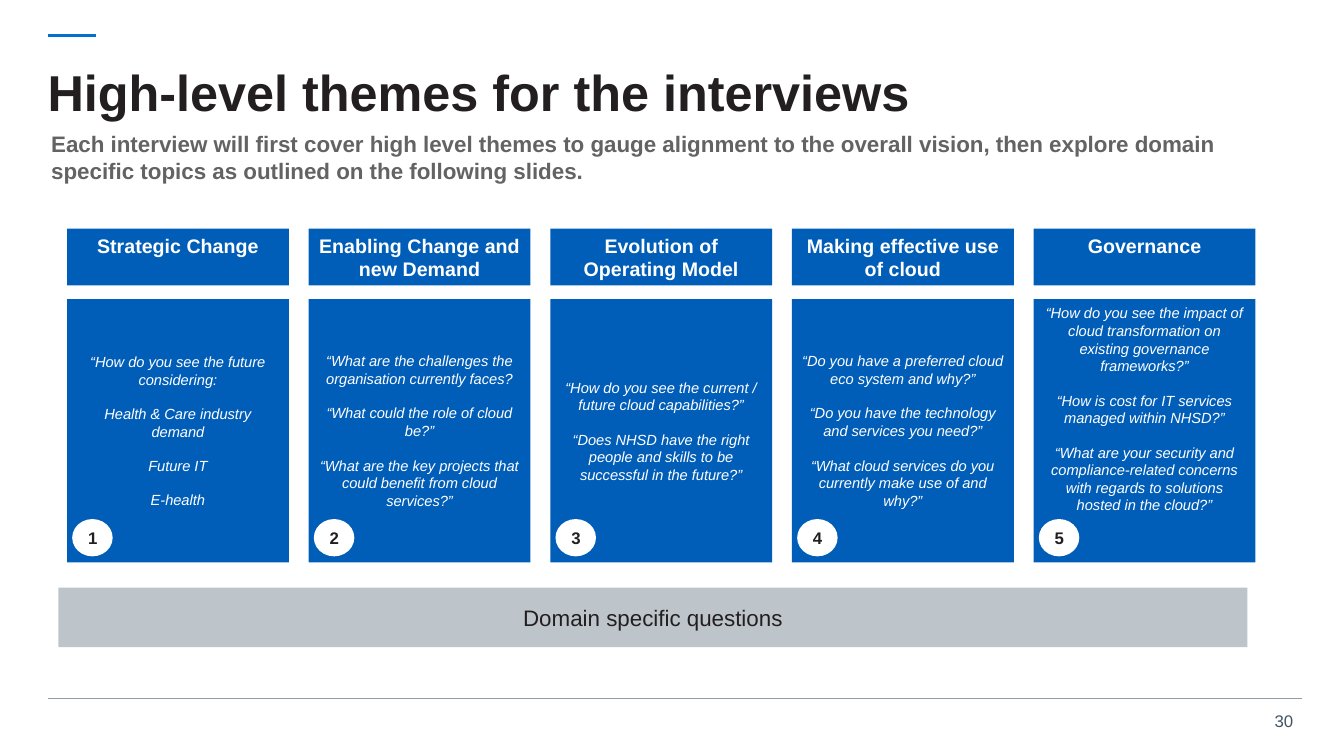
from pptx import Presentation
from pptx.dml.color import RGBColor
from pptx.enum.shapes import MSO_CONNECTOR, MSO_SHAPE
from pptx.enum.text import MSO_ANCHOR, PP_ALIGN
from pptx.oxml.ns import qn
from pptx.util import Cm, Pt

BLUE = RGBColor(0x00, 0x5E, 0xB8)
ACCENT = RGBColor(0x00, 0x72, 0xCE)
RULE = RGBColor(0x91, 0x9E, 0xA8)
BAR = RGBColor(0xBD, 0xC5, 0xCB)
INK = RGBColor(0x23, 0x1F, 0x20)
GREY = RGBColor(0x63, 0x63, 0x63)
SLATE = RGBColor(0x42, 0x55, 0x63)
WHITE = RGBColor(0xFF, 0xFF, 0xFF)

COLUMN_LEFT, COLUMN_STEP, COLUMN_WIDTH = 1.69, 6.09, 5.59

THEMES = [
    ("Strategic Change", MSO_ANCHOR.MIDDLE, [
        "“How do you see the future considering:",
        "Health & Care industry demand",
        "Future IT",
        "E-health"]),
    ("Enabling Change and new Demand", MSO_ANCHOR.MIDDLE, [
        "“What are the challenges the organisation currently faces?",
        "“What could the role of cloud be?”",
        "“What are the key projects that could benefit from cloud services?”"]),
    ("Evolution of Operating Model", MSO_ANCHOR.MIDDLE, [
        "“How do you see the current / future cloud capabilities?”",
        "“Does NHSD have the right people and skills to be successful in the future?”"]),
    ("Making effective use of cloud", MSO_ANCHOR.MIDDLE, [
        "“Do you have a preferred cloud eco system and why?”",
        "“Do you have the technology and services you need?”",
        "“What cloud services do you currently make use of and why?”"]),
    ("Governance", MSO_ANCHOR.TOP, [
        "“How do you see the impact of cloud transformation on existing governance frameworks?”",
        "“How is cost for IT services managed within NHSD?”",
        "“What are your security and compliance-related concerns with regards to solutions "
        "hosted in the cloud?”"]),
]


def write(tf, texts, size, color, bold=False, italic=False,
          align=PP_ALIGN.LEFT, anchor=MSO_ANCHOR.TOP, gap=0):
    """Fill a text frame, one paragraph per text, with gap points between them."""
    tf.word_wrap = True
    tf.vertical_anchor = anchor
    for i, text in enumerate(texts):
        p = tf.paragraphs[0] if i == 0 else tf.add_paragraph()
        p.alignment = align
        if i:
            p.space_before = Pt(gap)
        r = p.add_run()
        r.text = text
        r.font.name = "Arial"
        r.font.size = Pt(size)
        r.font.bold = bold
        r.font.italic = italic
        r.font.color.rgb = color


def add_text(s, box, text, size, color, **style):
    tf = s.shapes.add_textbox(*map(Cm, box)).text_frame
    write(tf, [text], size, color, **style)
    return tf


def add_block(s, kind, box, fill, texts, size, color, anchor=MSO_ANCHOR.MIDDLE, **style):
    sp = s.shapes.add_shape(kind, *map(Cm, box))
    sp.shadow.inherit = False
    sp.fill.solid()
    sp.fill.fore_color.rgb = fill
    sp.line.fill.background()
    write(sp.text_frame, texts, size, color, align=PP_ALIGN.CENTER, anchor=anchor, **style)


def add_rule(s, left, right, y, color, width):
    line = s.shapes.add_connector(MSO_CONNECTOR.STRAIGHT, Cm(left), Cm(y), Cm(right), Cm(y))
    line.line.color.rgb = color
    line.line.width = Pt(width)
    sp_pr = line._element.spPr
    sp_pr.append(sp_pr.makeelement(qn("a:effectLst"), {}))


def add_theme(s, index, heading, anchor, questions):
    left = COLUMN_LEFT + index * COLUMN_STEP
    add_block(s, MSO_SHAPE.RECTANGLE, (left, 5.76, COLUMN_WIDTH, 1.43), BLUE,
              [heading], 14, WHITE, anchor=MSO_ANCHOR.TOP, bold=True)
    add_block(s, MSO_SHAPE.RECTANGLE, (left, 7.54, COLUMN_WIDTH, 6.63), BLUE,
              questions, 10.5, WHITE, anchor=anchor, italic=True, gap=12)
    add_block(s, MSO_SHAPE.OVAL, (left + 0.13, 13.08, 1.02, 0.94), WHITE,
              [str(index + 1)], 12, INK, bold=True)


def main():
    prs = Presentation()
    prs.slide_width, prs.slide_height = Cm(33.87), Cm(19.05)
    s = prs.slides.add_slide(prs.slide_layouts[6])

    add_rule(s, 1.2, 2.41, 0.89, ACCENT, 2)
    title = add_text(s, (1.2, 1.2, 31.67, 2.41), "High-level themes for the interviews",
                     36, INK, bold=True, anchor=MSO_ANCHOR.MIDDLE)
    title.margin_left = title.margin_right = title.margin_top = title.margin_bottom = 0
    title.paragraphs[0].line_spacing = 0.9
    add_text(s, (1.04, 3.15, 32, 1.63),
             "Each interview will first cover high level themes to gauge alignment to the "
             "overall vision, then explore domain specific topics as outlined on the "
             "following slides.", 16, GREY, bold=True)

    for i, theme in enumerate(THEMES):
        add_theme(s, i, *theme)
    add_block(s, MSO_SHAPE.RECTANGLE, (1.47, 14.81, 29.97, 1.5), BAR,
              ["Domain specific questions"], 16, INK)

    add_rule(s, 1.2, 32.8, 17.6, RULE, 0.75)
    add_text(s, (31.8, 17.78, 1.04, 0.76), "30", 12, SLATE, align=PP_ALIGN.RIGHT)
    prs.save("out.pptx")


if __name__ == "__main__":
    main()
